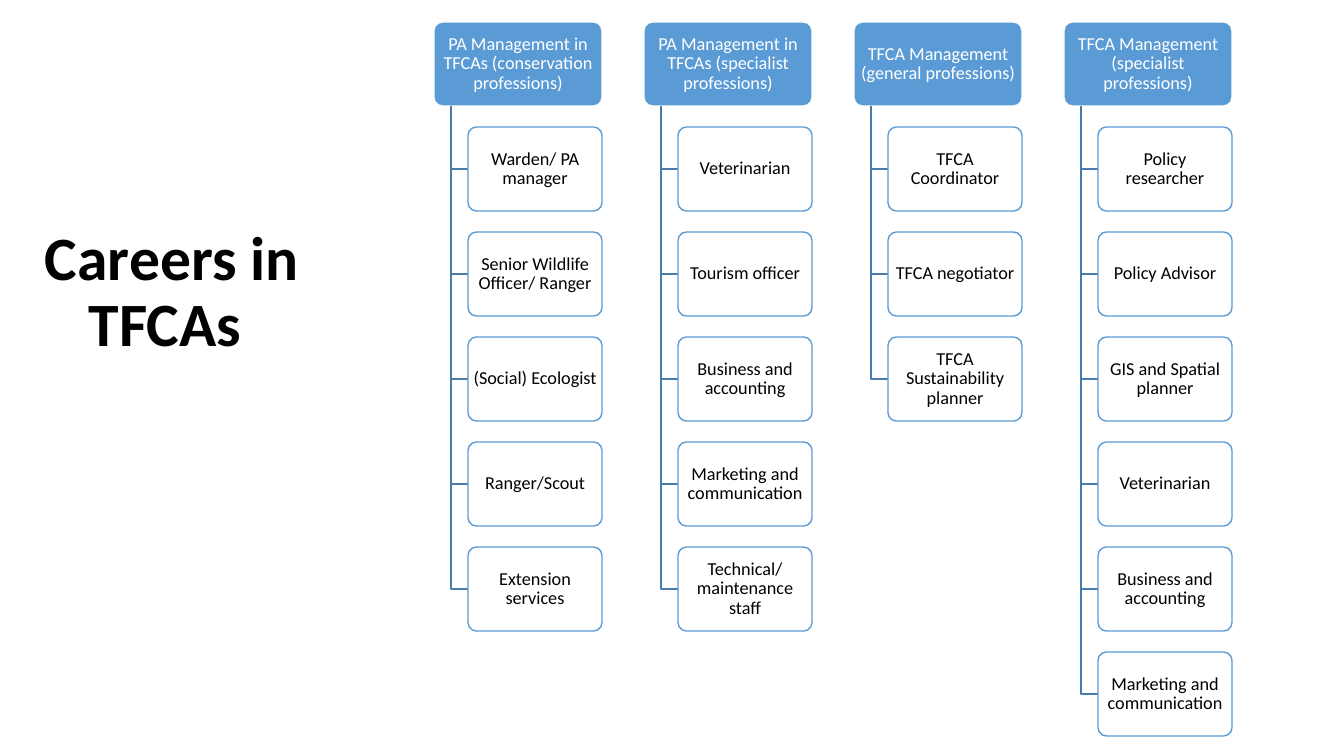
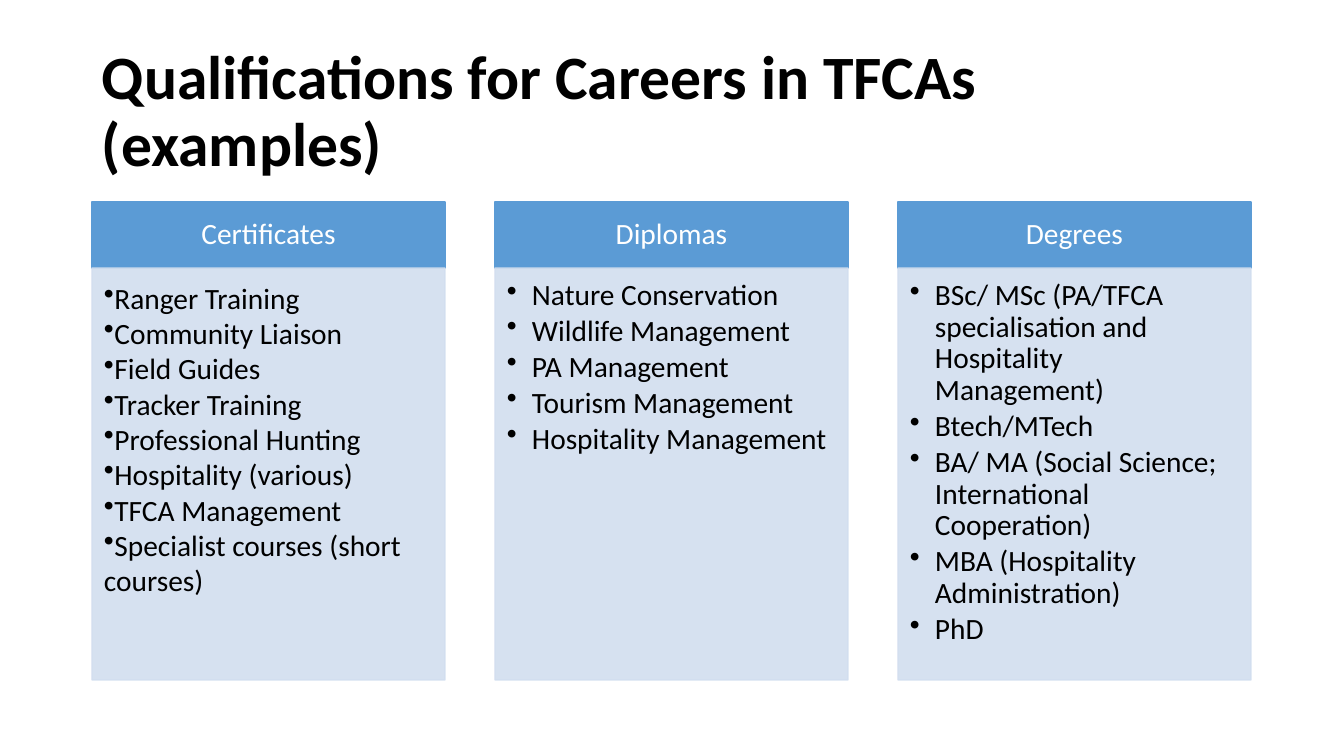
from dataclasses import dataclass
from typing import Any

import lxml.etree
import pptx
import pptx.dml.color
import pptx.enum.shapes
import pptx.enum.text
import pptx.oxml.ns
import pptx.util

RGBColor = pptx.dml.color.RGBColor
Align = pptx.enum.text.PP_ALIGN
Anchor = pptx.enum.text.MSO_ANCHOR
Preset = pptx.enum.shapes.MSO_SHAPE

BLACK = RGBColor(0x00, 0x00, 0x00)
WHITE = RGBColor(0xFF, 0xFF, 0xFF)
BLUE = RGBColor(0x5B, 0x9B, 0xD5)
PALE_BLUE = RGBColor(0xD2, 0xDE, 0xEF)
BRANCH_BLUE = RGBColor(0x49, 0x7C, 0xAB)

FONT = "Calibri"
EMU_PER_PX = 914400 / 100.8
PAGE_WIDTH, PAGE_HEIGHT = 1344, 756
LINE_WIDTH = pptx.util.Pt(1)
TITLE_SIZE, CAREER_SIZE, PANEL_SIZE = 44, 13, 21
TIGHT = 0.9
OPACITY = 90

TREE_LEFT, TREE_TOP = 434, 22
TREE_PITCH, ROW_PITCH = 210, 105
HEAD_WIDTH, CAREER_WIDTH, CARD_HEIGHT = 168, 134, 84
TRUNK_INDENT = 17

PANEL_LEFT, PANEL_TOP = 92, 202
PANEL_PITCH, PANEL_WIDTH = 403, 353
PANEL_HEAD_HEIGHT, PANEL_BODY_HEIGHT = 66, 412
HANGING_INDENT = 25


@dataclass(frozen=True)
class Area:
    left: int
    top: int
    width: int
    height: int


@dataclass(frozen=True)
class Insets:
    left: int
    top: int
    right: int
    bottom: int


CARD_INSETS = Insets(3, 2, 3, 2)
PANEL_HEAD_INSETS = Insets(16, 9, 16, 9)
PANEL_BODY_INSETS = Insets(12, 12, 16, 18)


@dataclass(frozen=True)
class CareerGroup:
    heading: str
    careers: tuple[str, ...]


@dataclass(frozen=True)
class Panel:
    heading: str
    items: tuple[str, ...]
    hanging: bool = True


CAREER_GROUPS = (
    CareerGroup("PA Management in TFCAs (conservation professions)", (
        "Warden/ PA manager", "Senior Wildlife Officer/ Ranger",
        "(Social) Ecologist", "Ranger/Scout", "Extension services")),
    CareerGroup("PA Management in TFCAs (specialist professions)", (
        "Veterinarian", "Tourism officer", "Business and accounting",
        "Marketing and communication", "Technical/ maintenance staff")),
    CareerGroup("TFCA Management (general professions)", (
        "TFCA Coordinator", "TFCA negotiator",
        "TFCA Sustainability planner")),
    CareerGroup("TFCA Management (specialist professions)", (
        "Policy researcher", "Policy Advisor", "GIS and Spatial planner",
        "Veterinarian", "Business and accounting",
        "Marketing and communication")),
)

PANELS = (
    Panel("Certificates", (
        "Ranger Training", "Community Liaison", "Field Guides",
        "Tracker Training", "Professional Hunting", "Hospitality (various)",
        "TFCA Management", "Specialist courses (short courses)"),
        hanging=False),
    Panel("Diplomas", (
        "Nature Conservation", "Wildlife Management", "PA Management",
        "Tourism Management", "Hospitality Management")),
    Panel("Degrees", (
        "BSc/ MSc (PA/TFCA specialisation and Hospitality Management)",
        "Btech/MTech",
        "BA/ MA (Social Science; International Cooperation)",
        "MBA (Hospitality Administration)", "PhD")),
)


def px(length: int) -> pptx.util.Emu:
    return pptx.util.Emu(round(length * EMU_PER_PX))


def set_insets(frame: Any, insets: Insets) -> None:
    frame.margin_left, frame.margin_top = px(insets.left), px(insets.top)
    frame.margin_right, frame.margin_bottom = px(insets.right), px(insets.bottom)


def add_span(para: Any, text: str, size: int, color: RGBColor,
             bold: bool = False) -> None:
    span = para.add_run()
    span.text = text
    span.font.name = FONT
    span.font.size = pptx.util.Pt(size)
    span.font.bold = bold
    span.font.color.rgb = color


def add_page(deck: Any, title: str, area: Area, align: Align,
             insets: Insets) -> Any:
    page = deck.slides.add_slide(deck.slide_layouts[5])
    box = page.shapes.title
    box.left, box.top = px(area.left), px(area.top)
    box.width, box.height = px(area.width), px(area.height)
    frame = box.text_frame
    frame.word_wrap = True
    frame.auto_size = pptx.enum.text.MSO_AUTO_SIZE.NONE
    frame.vertical_anchor = Anchor.MIDDLE
    set_insets(frame, insets)
    para = frame.paragraphs[0]
    para.alignment = align
    para.line_spacing = TIGHT
    add_span(para, title, TITLE_SIZE, BLACK, bold=True)
    return page


def add_box(page: Any, preset: Preset, area: Area, fill: RGBColor,
            line: RGBColor, insets: Insets, opacity: int = 100) -> Any:
    box = page.shapes.add_shape(preset, px(area.left), px(area.top),
                                px(area.width), px(area.height))
    box.shadow.inherit = False
    box.fill.solid()
    box.fill.fore_color.rgb = fill
    box.line.color.rgb = line
    box.line.width = LINE_WIDTH
    if opacity < 100:
        for color in box._element.spPr.iter(pptx.oxml.ns.qn("a:srgbClr")):
            if color.get("val") == str(fill):
                alpha = lxml.etree.SubElement(color, pptx.oxml.ns.qn("a:alpha"))
                alpha.set("val", str(opacity * 1000))
    box.text_frame.word_wrap = True
    set_insets(box.text_frame, insets)
    return box


def add_label(box: Any, text: str, size: int, color: RGBColor) -> None:
    box.text_frame.vertical_anchor = Anchor.MIDDLE
    para = box.text_frame.paragraphs[0]
    para.alignment = Align.CENTER
    para.line_spacing = TIGHT
    add_span(para, text, size, color)


def add_card(page: Any, area: Area, text: str, fill: RGBColor,
             line: RGBColor, color: RGBColor, opacity: int = 100) -> None:
    card = add_box(page, Preset.ROUNDED_RECTANGLE, area, fill, line,
                   CARD_INSETS, opacity)
    card.adjustments[0] = 0.1
    add_label(card, text, CAREER_SIZE, color)


def add_branch(page: Any, left: int, top: int, bottom: int) -> None:
    outline = page.shapes.build_freeform(px(left), px(top))
    outline.add_line_segments(
        [(px(left), px(bottom)), (px(left + TRUNK_INDENT), px(bottom))],
        close=False)
    branch = outline.convert_to_shape()
    branch.shadow.inherit = False
    branch.fill.background()
    branch.line.color.rgb = BRANCH_BLUE
    branch.line.width = LINE_WIDTH


def add_career_group(page: Any, group: CareerGroup, left: int) -> None:
    add_card(page, Area(left, TREE_TOP, HEAD_WIDTH, CARD_HEIGHT),
             group.heading, BLUE, WHITE, WHITE)
    for row, career in enumerate(group.careers, start=1):
        top = TREE_TOP + row * ROW_PITCH
        add_branch(page, left + TRUNK_INDENT, TREE_TOP + CARD_HEIGHT,
                   top + CARD_HEIGHT // 2)
        add_card(page, Area(left + 2 * TRUNK_INDENT, top, CAREER_WIDTH,
                            CARD_HEIGHT),
                 career, WHITE, BLUE, BLACK, OPACITY)


def add_bullet(para: Any, indent: int) -> None:
    properties = para._p.get_or_add_pPr()
    properties.set("marL", str(px(indent)))
    properties.set("indent", str(-px(indent)))
    bullet = lxml.etree.SubElement(properties, pptx.oxml.ns.qn("a:buChar"))
    bullet.set("char", "•")


def add_panel(page: Any, panel: Panel, left: int) -> None:
    head = add_box(page, Preset.RECTANGLE,
                   Area(left, PANEL_TOP, PANEL_WIDTH, PANEL_HEAD_HEIGHT),
                   BLUE, BLUE, PANEL_HEAD_INSETS)
    add_label(head, panel.heading, PANEL_SIZE, WHITE)
    body = add_box(page, Preset.RECTANGLE,
                   Area(left, PANEL_TOP + PANEL_HEAD_HEIGHT, PANEL_WIDTH,
                        PANEL_BODY_HEIGHT),
                   PALE_BLUE, PALE_BLUE, PANEL_BODY_INSETS, OPACITY)
    frame = body.text_frame
    frame.vertical_anchor = Anchor.TOP
    for index, item in enumerate(panel.items):
        para = frame.add_paragraph() if index else frame.paragraphs[0]
        para.alignment = Align.LEFT
        if panel.hanging:
            para.line_spacing = TIGHT
            para.space_after = pptx.util.Pt(3)
        add_bullet(para, HANGING_INDENT if panel.hanging else 0)
        add_span(para, item, PANEL_SIZE, BLACK)


def main() -> None:
    deck = pptx.Presentation()
    deck.slide_width, deck.slide_height = px(PAGE_WIDTH), px(PAGE_HEIGHT)

    careers = add_page(deck, "Careers in TFCAs ", Area(23, 34, 298, 586),
                       Align.CENTER, Insets(10, 5, 10, 72))
    for column, group in enumerate(CAREER_GROUPS):
        add_career_group(careers, group, TREE_LEFT + column * TREE_PITCH)

    qualifications = add_page(
        deck, "Qualifications for Careers in TFCAs (examples)",
        Area(92, 40, 1160, 146), Align.LEFT, Insets(10, 5, 10, 5))
    for column, panel in enumerate(PANELS):
        add_panel(qualifications, panel, PANEL_LEFT + column * PANEL_PITCH)

    deck.save("out.pptx")


if __name__ == "__main__":
    main()
